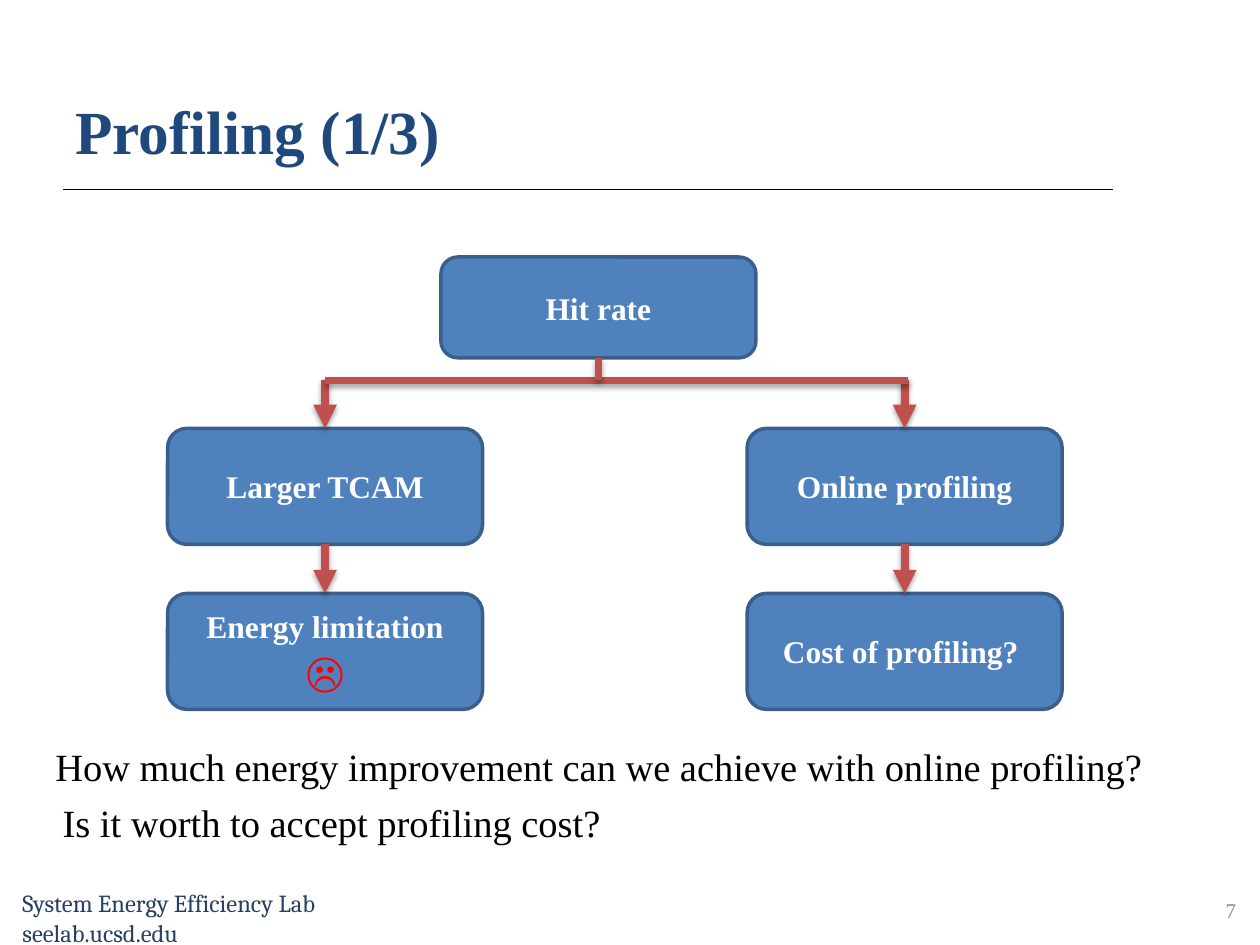
from lxml import etree
from pptx import Presentation
from pptx.dml.color import RGBColor
from pptx.enum.shapes import MSO_CONNECTOR, MSO_SHAPE
from pptx.enum.text import MSO_ANCHOR, PP_ALIGN
from pptx.oxml import parse_xml
from pptx.oxml.ns import nsdecls, qn
from pptx.util import Inches, Pt

STRAIGHT = MSO_CONNECTOR.STRAIGHT
ROUNDED = MSO_SHAPE.ROUNDED_RECTANGLE
TOP, MIDDLE, BOTTOM = MSO_ANCHOR.TOP, MSO_ANCHOR.MIDDLE, MSO_ANCHOR.BOTTOM
LEFT, CENTER, RIGHT = PP_ALIGN.LEFT, PP_ALIGN.CENTER, PP_ALIGN.RIGHT
TOP_SITE, BOTTOM_SITE = 0, 2

SERIF = "Times New Roman"
COLORS = {
    "title": "1F497D",
    "footer": "254061",
    "number": "8C8C8C",
    "box": "4F81BD",
    "border": "3A5F8C",
    "arrow": "C0504D",
    "sad": "FF0000",
    "white": "FFFFFF",
    "black": "000000",
}


def color(name):
    return RGBColor.from_string(COLORS[name])


def style(font, size, color_name, name=SERIF, bold=False):
    font.name = name
    font.size = Pt(size)
    font.bold = bold
    font.color.rgb = color(color_name)


def add_text(slide, box, lines, size, color_name, name=SERIF, bold=False,
             align=LEFT, anchor=TOP):
    shape = slide.shapes.add_textbox(*map(Inches, box))
    frame = shape.text_frame
    frame.word_wrap = True
    frame.vertical_anchor = anchor
    for index, line in enumerate(lines):
        paragraph = frame.add_paragraph() if index else frame.paragraphs[0]
        paragraph.text = line
        paragraph.alignment = align
        style(paragraph.font, size, color_name, name, bold)


def add_line(slide, start, end, color_name, width):
    line = slide.shapes.add_connector(STRAIGHT, *map(Inches, start + end))
    line.line.color.rgb = color(color_name)
    line.line.width = Pt(width)
    return line


def add_rule(slide, start, end):
    rule = add_line(slide, start, end, "black", 0.5)
    etree.SubElement(rule._element.spPr, qn("a:effectLst"))


def add_branch(slide, start, end, arrow=True, source=None, target=None):
    branch = add_line(slide, start, end, "arrow", 4.5)
    if source is not None:
        branch.begin_connect(source, BOTTOM_SITE)
    if target is not None:
        branch.end_connect(target, TOP_SITE)
    if arrow:
        etree.SubElement(branch.line._get_or_add_ln(), qn("a:tailEnd"), type="triangle")
    alpha = 38 if arrow else 35
    distance = Pt(1.6 if arrow else 1.8)
    branch._element.spPr.append(parse_xml(
        f'<a:effectLst {nsdecls("a")}>'
        f'<a:outerShdw blurRad="{Pt(3.1)}" dist="{distance}" dir="5400000" rotWithShape="0">'
        f'<a:srgbClr val="{COLORS["black"]}"><a:alpha val="{alpha * 1000}"/></a:srgbClr>'
        '</a:outerShdw></a:effectLst>'))


def add_node(slide, box, text, symbol=None):
    shape = slide.shapes.add_shape(ROUNDED, *map(Inches, box))
    shape.shadow.inherit = False
    shape.fill.solid()
    shape.fill.fore_color.rgb = color("box")
    shape.line.color.rgb = color("border")
    shape.line.width = Pt(2)
    frame = shape.text_frame
    frame.word_wrap = True
    frame.vertical_anchor = MIDDLE
    paragraph = frame.paragraphs[0]
    paragraph.alignment = CENTER
    paragraph.add_run().text = text
    style(paragraph.font, 18, "white", bold=True)
    if symbol:
        run = paragraph.add_run()
        run.text = symbol
        style(run.font, 24, "sad", bold=True)
    return shape


def add_header(slide, left, top, width, height):
    add_text(slide, (left, top, width, height), ["Profiling (1/3)"], 35, "title",
             bold=True, anchor=BOTTOM)
    rule_y = top + height + 0.13
    add_rule(slide, (left, rule_y), (left + 8.33, rule_y))


def add_tree(slide, left, top):
    width, root_height, height = 2.5, 0.8, 0.92
    bar_y = top + 0.98
    child_y, result_y = top + 1.36, top + 2.67
    root_left = left + 2.17
    root_x = root_left + width / 2

    root = add_node(slide, (root_left, top, width, root_height), "Hit rate")
    columns = [
        (left, "Larger TCAM", "Energy limitation ", "☹"),
        (left + 4.6, "Online profiling", "Cost of profiling? ", None),
    ]
    for column, child_text, result_text, symbol in columns:
        child = add_node(slide, (column, child_y, width, height), child_text)
        result = add_node(slide, (column, result_y, width, height), result_text, symbol)
        x = column + width / 2
        add_branch(slide, (x, bar_y), (x, child_y), target=child)
        add_branch(slide, (x, child_y + height), (x, result_y), source=child, target=result)

    bar_ends = [column[0] + width / 2 for column in columns]
    add_branch(slide, (bar_ends[0], bar_y), (bar_ends[1] + 0.03, bar_y), arrow=False)
    add_branch(slide, (root_x, top + root_height), (root_x, bar_y), arrow=False, source=root)


def add_questions(slide, left, top):
    add_text(slide, (left, top, 9.42, 0.47),
             ["How much energy improvement can we achieve with online profiling? "],
             22, "black", align=CENTER)
    add_text(slide, (left + 0.09, top + 0.44, 5, 0.47),
             ["Is it worth to accept profiling cost? "], 22, "black", align=CENTER)


def add_footer(slide, left, top):
    add_text(slide, (left, top, 3.17, 0.57),
             ["System Energy Efficiency Lab", "seelab.ucsd.edu"], 14, "footer", name="Cambria")
    add_text(slide, (left + 7.5, top + 0.02, 2.33, 0.4), ["7"], 12, "number",
             align=RIGHT, anchor=MIDDLE)


def main():
    presentation = Presentation()
    presentation.slide_width = Inches(10)
    presentation.slide_height = Inches(7.5)
    slide = presentation.slides.add_slide(presentation.slide_layouts[6])
    add_header(slide, 0.5, 0.42, 8.25, 0.95)
    add_tree(slide, 1.33, 2.04)
    add_questions(slide, 0.08, 5.85)
    add_footer(slide, 0.08, 7)
    presentation.save("out.pptx")


if __name__ == "__main__":
    main()
